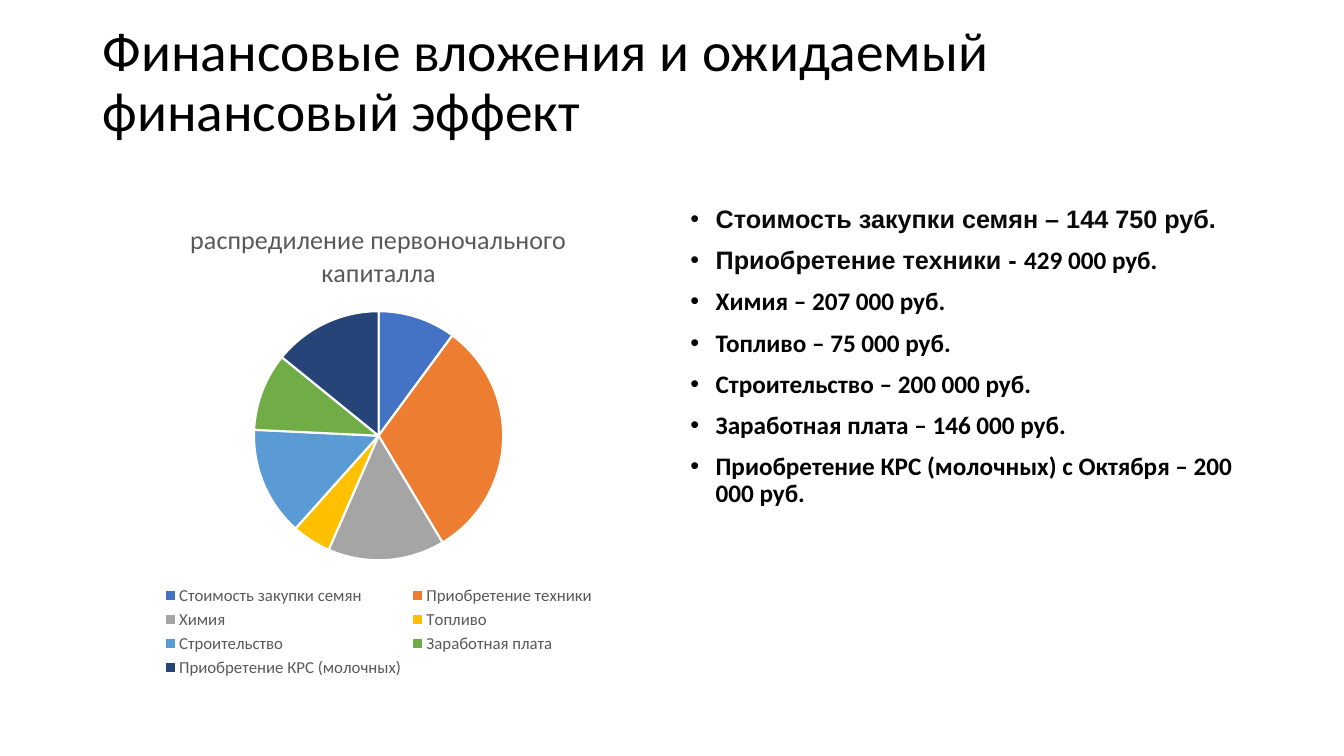
from lxml import etree
from pptx import Presentation
from pptx.chart.data import CategoryChartData
from pptx.dml.color import RGBColor
from pptx.enum.chart import XL_CHART_TYPE, XL_LEGEND_POSITION
from pptx.enum.text import MSO_ANCHOR
from pptx.oxml.ns import qn
from pptx.util import Inches, Pt

PIE = XL_CHART_TYPE.PIE
BOTTOM = XL_LEGEND_POSITION.BOTTOM
MIDDLE = MSO_ANCHOR.MIDDLE

COLORS = {"black": "000000", "ink": "0A0A0A", "gray": "595959", "white": "FFFFFF"}
TITLE = "Финансовые вложения и ожидаемый финансовый эффект"
CHART_TITLE = "распредиление первоночального капиталла"
SHARES = [
    ("Стоимость закупки семян", 10, "4472C4"),
    ("Приобретение техники", 31, "ED7D31"),
    ("Химия", 15, "A5A5A5"),
    ("Топливо", 5, "FFC000"),
    ("Строительство", 14, "5B9BD5"),
    ("Заработная плата", 10, "70AD47"),
    ("Приобретение КРС (молочных)", 14, "264478"),
]
ARIAL = ("Arial", "ink")
CALIBRI = ("Calibri", "black")
COSTS = [
    [("Стоимость закупки семян – 144 750 руб.", ARIAL)],
    [("Приобретение техники - ", ARIAL), ("429 000 руб.", CALIBRI)],
    [("Химия – 207 000 руб.", CALIBRI)],
    [("Топливо – 75 000 руб.", CALIBRI)],
    [("Строительство – 200 000 руб.", CALIBRI)],
    [("Заработная плата – 146 000 руб.", CALIBRI)],
    [("Приобретение КРС (молочных) с Октября – 200 000 руб.", CALIBRI)],
]

LEFT, TOP = 0.92, 2
COLUMN_WIDTH, COLUMN_HEIGHT = 5.67, 4.76
TITLE_WIDTH = 11.5
RIGHT_COLUMN = LEFT + TITLE_WIDTH - COLUMN_WIDTH


def style_font(font, size, color, name="Calibri", bold=False):
    """Set the size, colour, typeface and weight of a font."""
    font.size = Pt(size)
    font.name = name
    font.bold = bold
    font.color.rgb = RGBColor.from_string(COLORS[color])


def add_text_frame(slide, left, top, width, height):
    """Add a wrapping text box and return its text frame."""
    box = slide.shapes.add_textbox(Inches(left), Inches(top), Inches(width), Inches(height))
    box.text_frame.word_wrap = True
    return box.text_frame


def add_run(paragraph, text, *style):
    """Add one styled run to a paragraph."""
    run = paragraph.add_run()
    run.text = text
    style_font(run.font, *style)


def add_title(slide):
    """Add the slide title, raised within its box."""
    frame = add_text_frame(slide, LEFT, 0.4, TITLE_WIDTH, 1.45)
    frame.vertical_anchor = MIDDLE
    frame.margin_bottom = Inches(0.65)
    paragraph = frame.paragraphs[0]
    paragraph.line_spacing = 0.9
    add_run(paragraph, TITLE, 39.6, "black")


def add_capital_chart(slide):
    """Add the pie chart of the starting capital."""
    data = CategoryChartData()
    data.categories = [name for name, _, _ in SHARES]
    data.add_series(CHART_TITLE, [value for _, value, _ in SHARES])
    chart = slide.shapes.add_chart(
        PIE, Inches(LEFT), Inches(TOP), Inches(COLUMN_WIDTH), Inches(COLUMN_HEIGHT), data
    ).chart
    style_font(chart.font, 10, "black")
    chart.has_title = True
    add_run(chart.chart_title.text_frame.paragraphs[0], CHART_TITLE, 18.6, "gray")
    chart.chart_title.include_in_layout = False
    chart.has_legend = True
    chart.legend.position = BOTTOM
    chart.legend.include_in_layout = False
    style_font(chart.legend.font, 12, "gray")
    plot = chart.plots[0]
    plot.vary_by_categories = True
    for index, (_, _, color) in enumerate(SHARES):
        wedge = plot.series[0].points[index].format
        wedge.fill.solid()
        wedge.fill.fore_color.rgb = RGBColor.from_string(color)
        wedge.line.color.rgb = RGBColor.from_string(COLORS["white"])
        wedge.line.width = Pt(1.5)


def add_bullet(paragraph):
    """Give a paragraph a hanging round bullet."""
    properties = paragraph._p.get_or_add_pPr()
    properties.set("marL", str(Inches(0.25)))
    properties.set("indent", str(-Inches(0.25)))
    etree.SubElement(properties, qn("a:buFont")).set("typeface", "Arial")
    etree.SubElement(properties, qn("a:buChar")).set("char", "•")


def add_costs(slide):
    """Add the bulleted list of costs."""
    frame = add_text_frame(slide, RIGHT_COLUMN, TOP, COLUMN_WIDTH, COLUMN_HEIGHT)
    for index, runs in enumerate(COSTS):
        paragraph = frame.add_paragraph() if index else frame.paragraphs[0]
        add_bullet(paragraph)
        paragraph.line_spacing = 0.9
        if index:
            paragraph.space_before = Pt(10)
        for text, (font_name, color) in runs:
            add_run(paragraph, text, 18, color, font_name, True)


def main():
    """Build the slide and save it."""
    presentation = Presentation()
    presentation.slide_width = Inches(13.33)
    presentation.slide_height = Inches(7.5)
    slide = presentation.slides.add_slide(presentation.slide_layouts[6])
    add_title(slide)
    add_capital_chart(slide)
    add_costs(slide)
    presentation.save("out.pptx")


if __name__ == "__main__":
    main()
